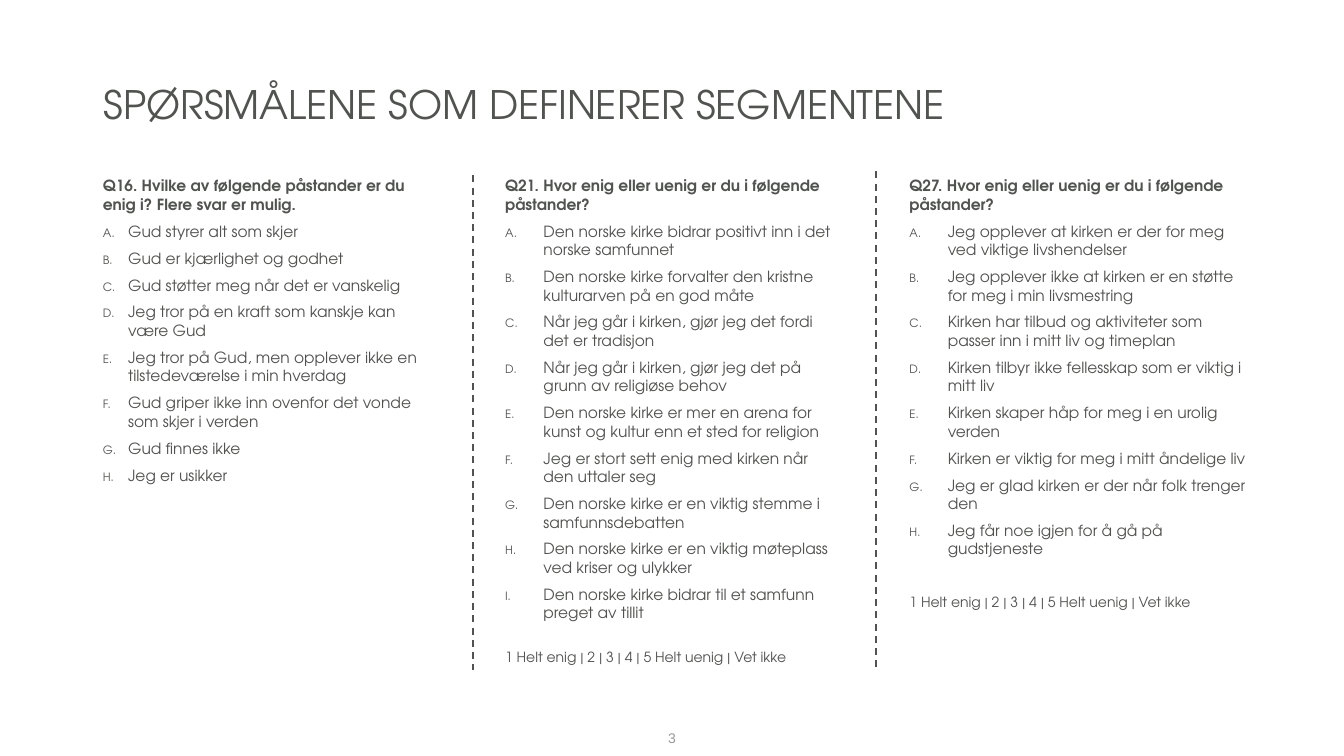
from lxml import etree
from pptx import Presentation
from pptx import util as u
from pptx.dml.color import RGBColor
from pptx.enum import dml, shapes, text
from pptx.oxml import ns

PX = 9144  # EMU; 100 px to the inch
INK = RGBColor(0x51, 0x53, 0x50)
GREY = RGBColor(0x98, 0x99, 0x98)
FONT = "TeX Gyre Adventor"
SCALE = "1 Helt enig | 2 | 3 | 4 | 5 Helt uenig | Vet ikke"
COLUMN_TOP = 170

# box (left, width, height), list indent, space before the scale, question, statements
COLUMNS = [
    ((92, 354, 345), 25, None,
     "Q16. Hvilke av følgende påstander er du enig i? Flere svar er mulig.", [
         "Gud styrer alt som skjer",
         "Gud er kjærlighet og godhet",
         "Gud støtter meg når det er vanskelig",
         "Jeg tror på en kraft som kanskje kan være Gud",
         "Jeg tror på Gud, men opplever ikke en tilstedeværelse i min hverdag",
         "Gud griper ikke inn ovenfor det vonde som skjer i verden",
         "Gud finnes ikke",
         "Jeg er usikker",
     ]),
    ((491, 351, 500), 38, 19,
     "Q21. Hvor enig eller uenig er du i følgende påstander?", [
         "Den norske kirke bidrar positivt inn i det norske samfunnet",
         "Den norske kirke forvalter den kristne kulturarven på en god måte",
         "Når jeg går i kirken, gjør jeg det fordi det er tradisjon",
         "Når jeg går i kirken, gjør jeg det på grunn av religiøse behov",
         "Den norske kirke er mer en arena for kunst og kultur enn et sted for religion",
         "Jeg er stort sett enig med kirken når den uttaler seg",
         "Den norske kirke er en viktig stemme i samfunnsdebatten",
         "Den norske kirke er en viktig møteplass ved kriser og ulykker",
         "Den norske kirke bidrar til et samfunn preget av tillit",
     ]),
    ((892, 354, 463), 38, 25,
     "Q27. Hvor enig eller uenig er du i følgende påstander?", [
         "Jeg opplever at kirken er der for meg ved viktige livshendelser",
         "Jeg opplever ikke at kirken er en støtte for meg i min livsmestring",
         "Kirken har tilbud og aktiviteter som passer inn i mitt liv og timeplan",
         "Kirken tilbyr ikke fellesskap som er viktig i mitt liv",
         "Kirken skaper håp for meg i en urolig verden",
         "Kirken er viktig for meg i mitt åndelige liv",
         "Jeg er glad kirken er der når folk trenger den",
         "Jeg får noe igjen for å gå på gudstjeneste",
     ]),
]
DIVIDERS = [(469, 174), (869, 170)]  # x, top
DIVIDER_BOTTOM = 665


def place(shape, left, top, width, height):
    shape.left, shape.top = left * PX, top * PX
    shape.width, shape.height = width * PX, height * PX


def style(paragraph, size, color=INK, name=FONT, bold=False):
    font = paragraph.font
    font.name, font.size, font.bold = name, u.Pt(size), bold
    font.color.rgb = color


def set_bullet(paragraph, indent, lettered):
    """Give the paragraph a hanging letter, or no bullet at all."""
    properties = paragraph._p.get_or_add_pPr()
    properties.set("marL", str(indent * PX))
    properties.set("indent", str(-indent * PX))
    if not lettered:
        etree.SubElement(properties, ns.qn("a:buNone"))
        return
    for tag, key, value in (("a:buSzPct", "val", "75000"),
                            ("a:buFont", "typeface", FONT),
                            ("a:buAutoNum", "type", "alphaUcPeriod")):
        etree.SubElement(properties, ns.qn(tag)).set(key, value)


def add_paragraph(frame, words, size=11, bold=False, indent=0, before=6):
    first = not frame.text
    paragraph = frame.paragraphs[0] if first else frame.add_paragraph()
    paragraph.text = words
    set_bullet(paragraph, indent, lettered=indent > 0)
    paragraph.space_before = u.Pt(0 if first else before)
    style(paragraph, size, bold=bold)


def fill_title(title, words):
    place(title, 93, 40, 1152, 92)
    frame = title.text_frame
    frame.text = words
    frame.auto_size = text.MSO_AUTO_SIZE.NONE
    frame.vertical_anchor = text.MSO_ANCHOR.BOTTOM
    paragraph = frame.paragraphs[0]
    paragraph.alignment = text.PP_ALIGN.LEFT
    paragraph.line_spacing = 0.9
    style(paragraph, 28)


def fill_column(body, box, indent, scale_gap, question, statements):
    left, width, height = box
    place(body, left, COLUMN_TOP, width, height)
    frame = body.text_frame
    frame.auto_size = text.MSO_AUTO_SIZE.SHAPE_TO_FIT_TEXT
    frame.vertical_anchor = text.MSO_ANCHOR.TOP
    add_paragraph(frame, question, bold=True)
    for statement in statements:
        add_paragraph(frame, statement, indent=indent)
    if scale_gap:
        add_paragraph(frame, SCALE, size=10, before=scale_gap)


def add_divider(slide, x, top):
    divider = slide.shapes.add_connector(
        shapes.MSO_CONNECTOR.STRAIGHT, x * PX, top * PX, x * PX, DIVIDER_BOTTOM * PX)
    divider.line.color.rgb = INK
    divider.line.width = u.Pt(1.25)
    divider.line.dash_style = dml.MSO_LINE.DASH
    etree.SubElement(divider._element.spPr, ns.qn("a:effectLst"))


def add_page_number(slide, number):
    box = slide.shapes.add_textbox(629 * PX, 715 * PX, 75 * PX, 35 * PX)
    frame = box.text_frame
    frame.word_wrap = True
    frame.vertical_anchor = text.MSO_ANCHOR.MIDDLE
    frame.text = number
    paragraph = frame.paragraphs[0]
    paragraph.alignment = text.PP_ALIGN.CENTER
    style(paragraph, 10, color=GREY, name="Arial")


def main():
    presentation = Presentation()
    presentation.slide_width, presentation.slide_height = 1333 * PX, 750 * PX
    comparison = presentation.slide_layouts.get_by_name("Comparison")
    slide = presentation.slides.add_slide(comparison)

    title, *bodies = slide.placeholders
    fill_title(title, "SPØRSMÅLENE SOM DEFINERER SEGMENTENE")
    for body, column in zip(bodies, COLUMNS):
        fill_column(body, *column)
    for spare in bodies[len(COLUMNS):]:
        spare.element.getparent().remove(spare.element)

    for x, top in DIVIDERS:
        add_divider(slide, x, top)
    add_page_number(slide, "3")
    presentation.save("out.pptx")


if __name__ == "__main__":
    main()
